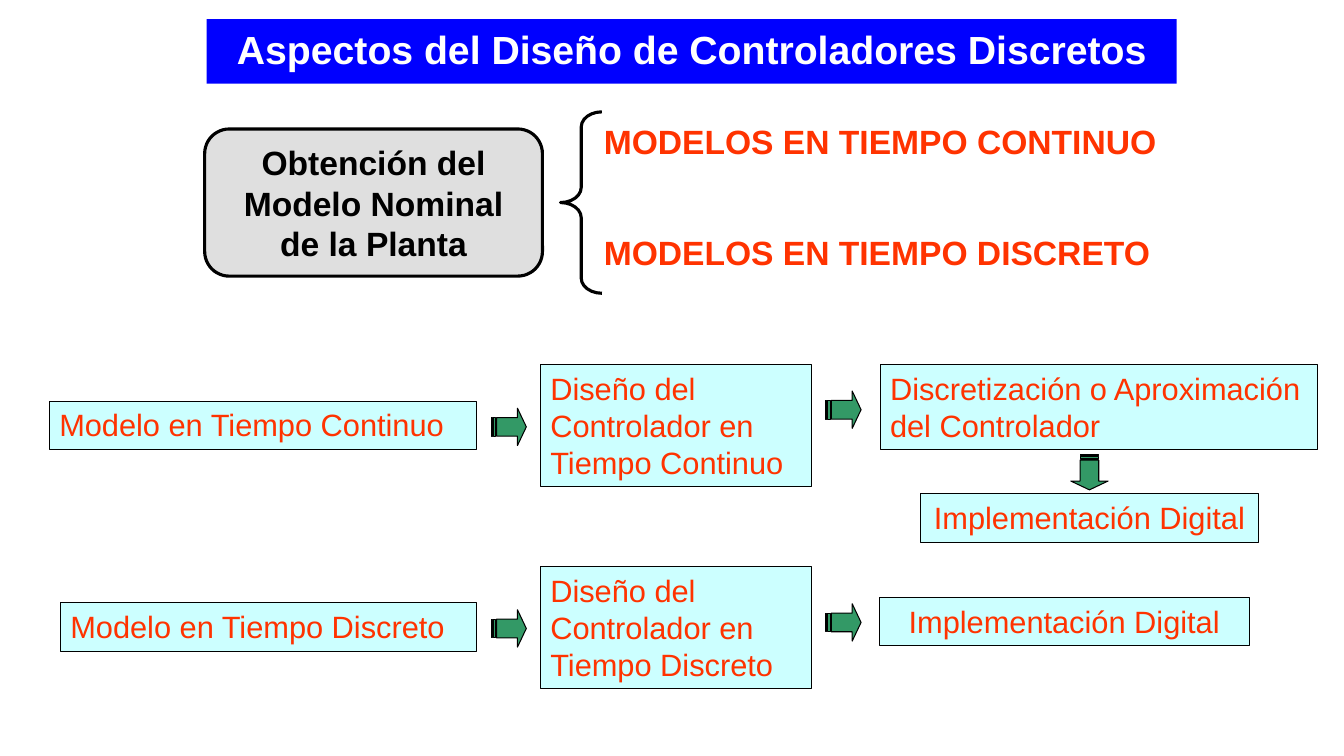
import pptx
import pptx.dml.color
import pptx.enum.shapes
import pptx.enum.text
import pptx.util
from lxml import etree

Inches = pptx.util.Inches
Pt = pptx.util.Pt
RGBColor = pptx.dml.color.RGBColor
SHAPE = pptx.enum.shapes.MSO_SHAPE
ALIGN = pptx.enum.text.PP_ALIGN
ANCHOR = pptx.enum.text.MSO_ANCHOR

BLACK = RGBColor(0x00, 0x00, 0x00)
WHITE = RGBColor(0xFF, 0xFF, 0xFF)
BLUE = RGBColor(0x00, 0x00, 0xFF)
SILVER = RGBColor(0xC0, 0xC0, 0xC0)
ORANGE = RGBColor(0xFF, 0x33, 0x00)
PALE_CYAN = RGBColor(0xCC, 0xFF, 0xFF)
GREEN = RGBColor(0x33, 0x99, 0x66)
DRAWING_NS = "http://schemas.openxmlformats.org/drawingml/2006/main"


class Diagram:
    font_name = "Arial"
    thin, thick = 0.75, 2.25

    def __init__(self, slide):
        self.slide = slide

    def outline(self, kind, left, top, width, height, fill=None, line=None):
        shape = self.slide.shapes.add_shape(
            kind, Inches(left), Inches(top), Inches(width), Inches(height))
        shape.shadow.inherit = False
        if fill is None:
            shape.fill.background()
        else:
            shape.fill.solid()
            shape.fill.fore_color.rgb = fill
        if line is None:
            shape.line.fill.background()
        else:
            shape.line.color.rgb = BLACK
            shape.line.width = Pt(line)
        return shape

    def set_text(self, shape, text, size, color, bold=False, align=ALIGN.LEFT,
                 anchor=ANCHOR.TOP):
        frame = shape.text_frame
        frame.word_wrap = True
        frame.vertical_anchor = anchor
        paragraph = frame.paragraphs[0]
        paragraph.text = text
        paragraph.alignment = align
        font = paragraph.font
        font.name, font.size, font.bold = self.font_name, Pt(size), bold
        font.color.rgb = color
        return paragraph

    def title(self, text, left, top, width, height):
        banner = self.outline(SHAPE.RECTANGLE, left, top, width, height, BLUE)
        heading = self.set_text(banner, text, 28, WHITE, True, ALIGN.CENTER, ANCHOR.MIDDLE)
        heading.line_spacing = 0.9
        banner.text_frame.word_wrap = False

    def topic(self, text, left, top, width, height):
        topic = self.outline(SHAPE.ROUNDED_RECTANGLE, left, top, width, height,
                             SILVER, self.thick)
        topic.adjustments[0] = 0.167
        # Half-transparent fill
        color = topic.element.spPr.find(f"{{{DRAWING_NS}}}solidFill/{{{DRAWING_NS}}}srgbClr")
        etree.SubElement(color, f"{{{DRAWING_NS}}}alpha", val="50000")
        self.set_text(topic, text, 24, BLACK, True, ALIGN.CENTER, ANCHOR.MIDDLE)

    def brace(self, left, top, width, height):
        brace = self.outline(SHAPE.LEFT_BRACE, left, top, width, height, line=self.thick)
        brace.adjustments[0] = 0.367
        brace.adjustments[1] = 0.5

    def label(self, text, left, top, width, height):
        label = self.slide.shapes.add_textbox(
            Inches(left), Inches(top), Inches(width), Inches(height))
        self.set_text(label, text, 24, ORANGE, True)

    def step(self, text, left, top, width, height, align=ALIGN.LEFT):
        step = self.outline(SHAPE.RECTANGLE, left, top, width, height,
                            PALE_CYAN, self.thin)
        self.set_text(step, text, 22, ORANGE, align=align)

    def arrow(self, left, top, rotation=0):
        arrow = self.outline(SHAPE.STRIPED_RIGHT_ARROW, left, top, 0.35, 0.37,
                             GREEN, self.thin)
        arrow.adjustments[0] = 0.5
        arrow.adjustments[1] = 0.25
        arrow.rotation = rotation


def main():
    deck = pptx.Presentation()
    deck.slide_width, deck.slide_height = Inches(13.33), Inches(7.5)
    diagram = Diagram(deck.slides.add_slide(deck.slide_layouts[6]))

    # Title and model types
    diagram.title("Aspectos del Diseño de Controladores Discretos", 2.05, 0.19, 9.62, 0.64)
    diagram.topic("Obtención del Modelo Nominal de la Planta", 2.03, 1.28, 3.35, 1.46)
    diagram.brace(5.56, 1.11, 0.41, 1.8)
    diagram.label("MODELOS EN TIEMPO CONTINUO", 5.89, 1.15, 5.78, 0.5)
    diagram.label("MODELOS EN TIEMPO DISCRETO", 5.89, 2.25, 5.64, 0.5)

    # Model and controller design, one row per kind of time
    for kind, model_left, row_top in (("Continuo", 0.49, 3.62), ("Discreto", 0.6, 5.62)):
        diagram.step(f"Modelo en Tiempo {kind}", model_left, row_top + 0.36,
                     4.73 - model_left, 0.48)
        diagram.arrow(4.87, row_top + 0.43)
        diagram.step(f"Diseño del Controlador en Tiempo {kind}", 5.36, row_top, 2.69, 1.21)

    # Continuous route: discretization, then implementation
    diagram.arrow(8.19, 3.88)
    diagram.step("Discretización o Aproximación del Controlador", 8.73, 3.62, 4.34, 0.84)
    diagram.arrow(10.63, 4.5, rotation=90)
    diagram.step("Implementación Digital", 9.13, 4.9, 3.35, 0.48, ALIGN.CENTER)

    # Discrete route: direct implementation
    diagram.arrow(8.19, 5.99)
    diagram.step("Implementación Digital", 8.72, 5.93, 3.67, 0.47, ALIGN.CENTER)

    deck.save("out.pptx")


if __name__ == "__main__":
    main()
